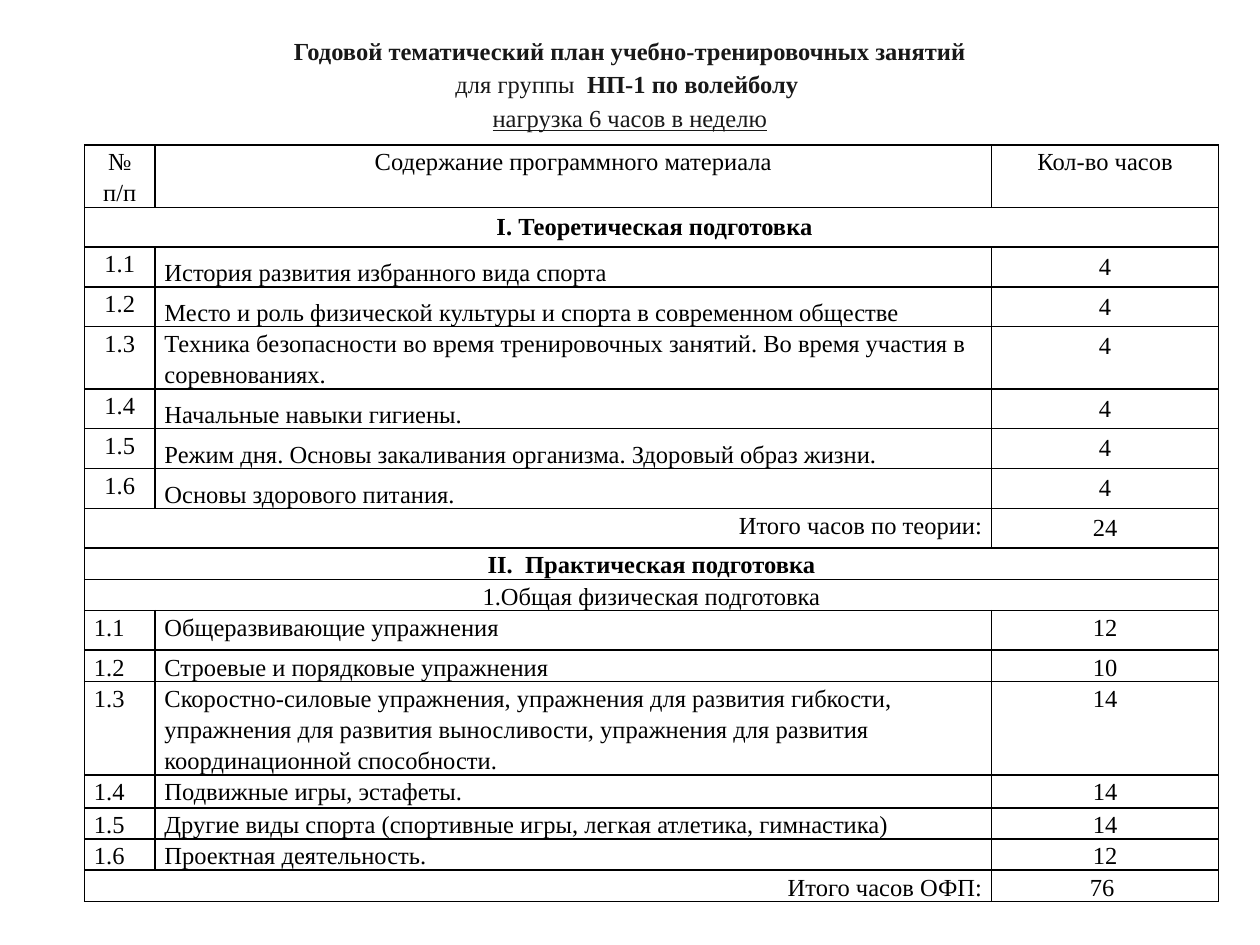
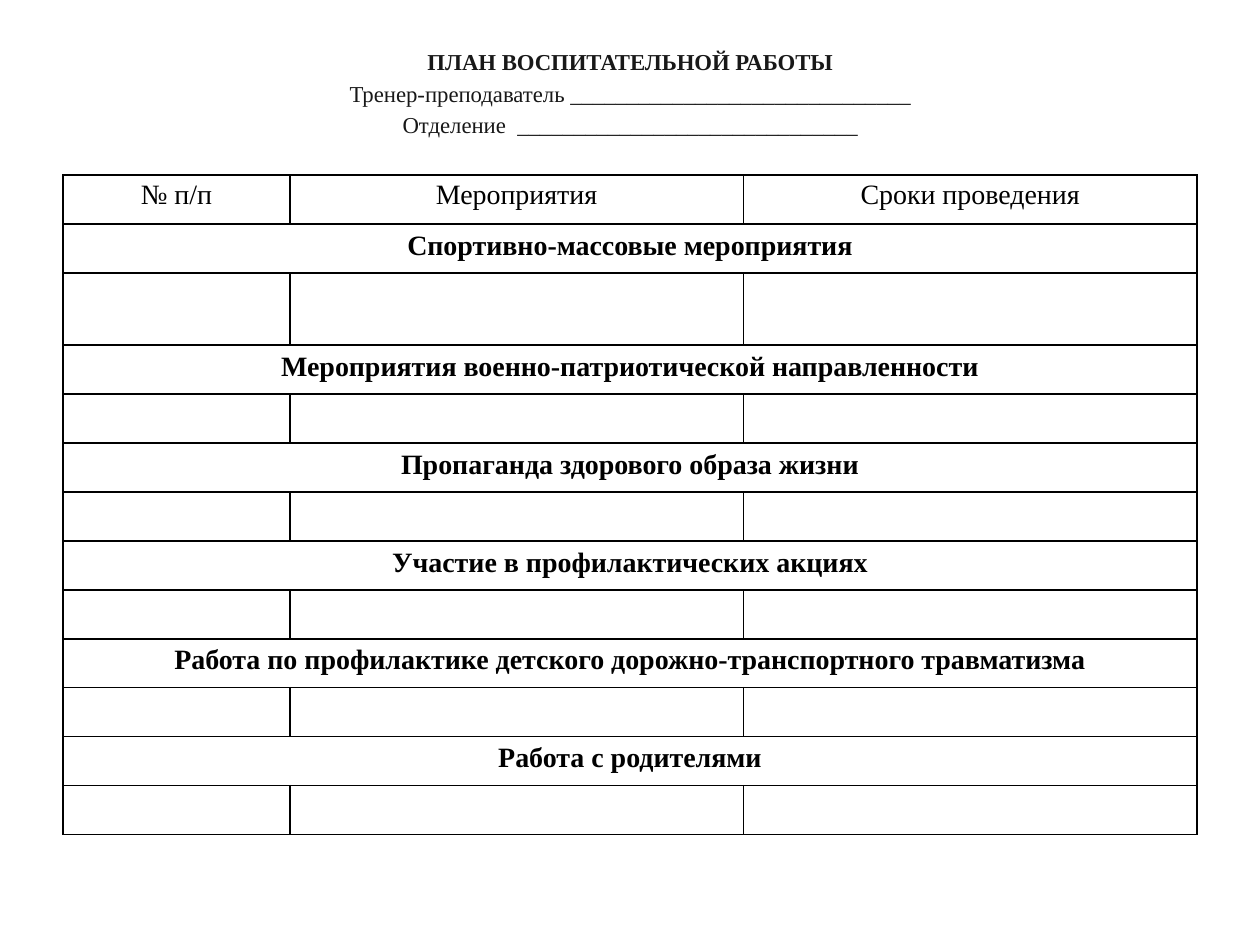
import dataclasses

import pptx
import pptx.dml.color
import pptx.enum.text
import pptx.oxml
import pptx.oxml.ns
import pptx.util

Pt = pptx.util.Pt
Align = pptx.enum.text.PP_ALIGN
Anchor = pptx.enum.text.MSO_ANCHOR


@dataclasses.dataclass(frozen=True)
class Theme:
    font: str = "Times New Roman"
    title_color: str = "181818"
    table_color: str = "000000"
    plan_title_size: int = 14
    plan_table_size: int = 14
    events_title_size: int = 13
    events_table_size: int = 16
    line_spacing: float = 1.15
    single_line: float = 1.107
    border_width: int = 1


THEME = Theme()

TIGHT = {"margin_left": Pt(5.4), "margin_right": Pt(5.4), "margin_top": 0, "margin_bottom": 0}
PADDED = {"margin_left": Pt(7.2), "margin_right": Pt(7.2), "margin_top": Pt(3.6), "margin_bottom": Pt(3.6)}
BOTTOM = {**TIGHT, "vertical_anchor": Anchor.BOTTOM}


def cell_format(margins, alignment, spacing=THEME.line_spacing, bold=False):
    return {"cell": margins, "para": {"alignment": alignment}, "spacing": spacing, "font": {"bold": bold}}


FORMATS = {
    "center": cell_format(TIGHT, Align.CENTER),
    "left": cell_format(TIGHT, Align.LEFT),
    "right": cell_format(TIGHT, Align.RIGHT),
    "bottom": cell_format(BOTTOM, Align.LEFT),
    "part": cell_format(TIGHT, Align.CENTER, bold=True),
    "section": cell_format(PADDED, Align.CENTER, 1, True),
    "hours": cell_format(PADDED, Align.CENTER, 1),
}

THEORY_TOPICS = [
    ("История развития избранного вида спорта", "4", 22.7),
    ("Место и роль физической культуры и спорта в современном обществе", "4", 22.7),
    ("Техника безопасности во время тренировочных занятий. Во время участия в соревнованиях.", "4", 35.4),
    ("Начальные навыки гигиены.", "4", 22.7),
    ("Режим дня. Основы закаливания организма. Здоровый образ жизни.", "4", 22.7),
    ("Основы здорового питания.", "4", 22.7),
]

FITNESS_TOPICS = [
    ("Общеразвивающие упражнения", "12", 22.7),
    ("Строевые и порядковые упражнения", "10", 17.7),
    ("Скоростно-силовые упражнения, упражнения для развития гибкости, упражнения для развития "
     "выносливости, упражнения для развития координационной способности.", "14", 53),
    ("Подвижные игры, эстафеты.", "14", 18.8),
    ("Другие виды спорта (спортивные игры, легкая атлетика, гимнастика)", "14", 17.7),
    ("Проектная деятельность.", "12", 17.7),
]

EVENT_SECTIONS = [
    "Спортивно-массовые мероприятия",
    "Мероприятия военно-патриотической направленности",
    "Пропаганда здорового образа жизни",
    "Участие в профилактических акциях",
    "Работа по профилактике детского дорожно-транспортного травматизма",
    "Работа с родителями",
]


def set_values(target, values):
    for name, value in values.items():
        setattr(target, name, value)


def add_span(para, text, size, color, values):
    span = para.add_run()
    span.text = text
    set_values(span.font, {"name": THEME.font, "size": Pt(size), **values})
    span.font.color.rgb = pptx.dml.color.RGBColor.from_string(color)


def add_heading(page, top, height, size, lines):
    box = page.shapes.add_textbox(Pt(36), Pt(top), Pt(648), Pt(height))
    frame = box.text_frame
    set_values(frame, {"word_wrap": True, "vertical_anchor": Anchor.MIDDLE,
                       "margin_top": 0, "margin_bottom": Pt(16.5)})
    for index, spans in enumerate(lines):
        para = frame.add_paragraph() if index else frame.paragraphs[0]
        set_values(para, {"alignment": Align.CENTER, "line_spacing": THEME.line_spacing})
        for text, values in spans:
            add_span(para, text, size, THEME.title_color, values)


def add_borders(cell):
    properties = cell._tc.get_or_add_tcPr()
    for side in ("lnL", "lnR", "lnT", "lnB"):
        properties.append(pptx.oxml.parse_xml(
            f'<a:{side} {pptx.oxml.ns.nsdecls("a")} w="{Pt(THEME.border_width)}">'
            f'<a:solidFill><a:srgbClr val="{THEME.table_color}"/></a:solidFill></a:{side}>'))


def fill_cell(cell, text, style, size):
    values = FORMATS[style]
    set_values(cell, values["cell"])
    para = cell.text_frame.paragraphs[0]
    set_values(para, values["para"])
    para.line_spacing = Pt(round(size * THEME.single_line * values["spacing"], 1))
    if text:
        add_span(para, text, size, THEME.table_color, values["font"])


def add_grid(page, left, top, widths, rows, size):
    height = sum(row_height for row_height, _ in rows)
    frame = page.shapes.add_table(len(rows), len(widths), Pt(left), Pt(top), Pt(sum(widths)), Pt(height))
    table = frame.table
    set_values(table, {"first_row": False, "horz_banding": False})
    for column, width in zip(table.columns, widths):
        column.width = Pt(width)
    for cell in table.iter_cells():
        add_borders(cell)
        cell.fill.background()
        fill_cell(cell, "", "left", size)
    for row_index, (row_height, entries) in enumerate(rows):
        table.rows[row_index].height = Pt(row_height)
        column_index = 0
        for text, style, columns in entries:
            cell = table.cell(row_index, column_index)
            if columns > 1:
                cell.merge(table.cell(row_index, column_index + columns - 1))
            fill_cell(cell, text, style, size)
            column_index += columns


def plain_row(height, texts, styles):
    return height, [(text, style, 1) for text, style in zip(texts, styles)]


def wide_row(height, text, style):
    return height, [(text, style, 3)]


def total_row(height, label, hours, style):
    return height, [(label, "right", 2), (hours, style, 1)]


def topic_rows(topics, styles):
    return [plain_row(height, (f"1.{number}", topic, hours), styles)
            for number, (topic, hours, height) in enumerate(topics, 1)]


def build_training_plan(page):
    add_heading(page, 19.5, 71, THEME.plan_title_size, [
        [("Годовой тематический план учебно-тренировочных занятий", {"bold": True})],
        [("для группы", {"bold": False}), ("  НП-1 по волейболу ", {"bold": True})],
        [("нагрузка 6 часов в неделю", {"bold": False, "underline": True})],
    ])
    rows = [
        plain_row(35.4, ("№ п/п", "Содержание программного материала", "Кол-во часов"), ["center"] * 3),
        wide_row(22.7, " I. Теоретическая подготовка", "section"),
        *topic_rows(THEORY_TOPICS, ("center", "bottom", "hours")),
        total_row(22.7, "Итого часов по теории:", "24", "hours"),
        wide_row(17.7, "II.  Практическая подготовка", "part"),
        wide_row(17.7, "1.Общая физическая подготовка", "center"),
        *topic_rows(FITNESS_TOPICS, ("left", "left", "center")),
        total_row(17.7, "Итого часов ОФП:", "76 ", "center"),
    ]
    add_grid(page, 48.3, 82.8, (40.3, 478.1, 129.6), rows, THEME.plan_table_size)


def build_events_plan(page):
    blank = "_" * 30
    add_heading(page, 9.4, 102, THEME.events_title_size, [
        [("ПЛАН ВОСПИТАТЕЛЬНОЙ РАБОТЫ", {"bold": True})],
        [(f"Тренер-преподаватель {blank}", {"bold": False})],
        [(f"Отделение  {blank}", {"bold": False})],
    ])
    rows = [plain_row(28, ("№ п/п", "Мероприятия", "Сроки проведения"), ["center"] * 3)]
    for index, section in enumerate(EVENT_SECTIONS):
        rows.append(wide_row(28, section, "section"))
        rows.append(plain_row(28 if index else 41.2, [""] * 3, ["left"] * 3))
    add_grid(page, 36, 100, (129.6, 259.2, 259.2), rows, THEME.events_table_size)


def main():
    deck = pptx.Presentation()
    set_values(deck, {"slide_width": Pt(720), "slide_height": Pt(540)})
    for build in (build_training_plan, build_events_plan):
        build(deck.slides.add_slide(deck.slide_layouts[6]))
    deck.save("out.pptx")


if __name__ == "__main__":
    main()
